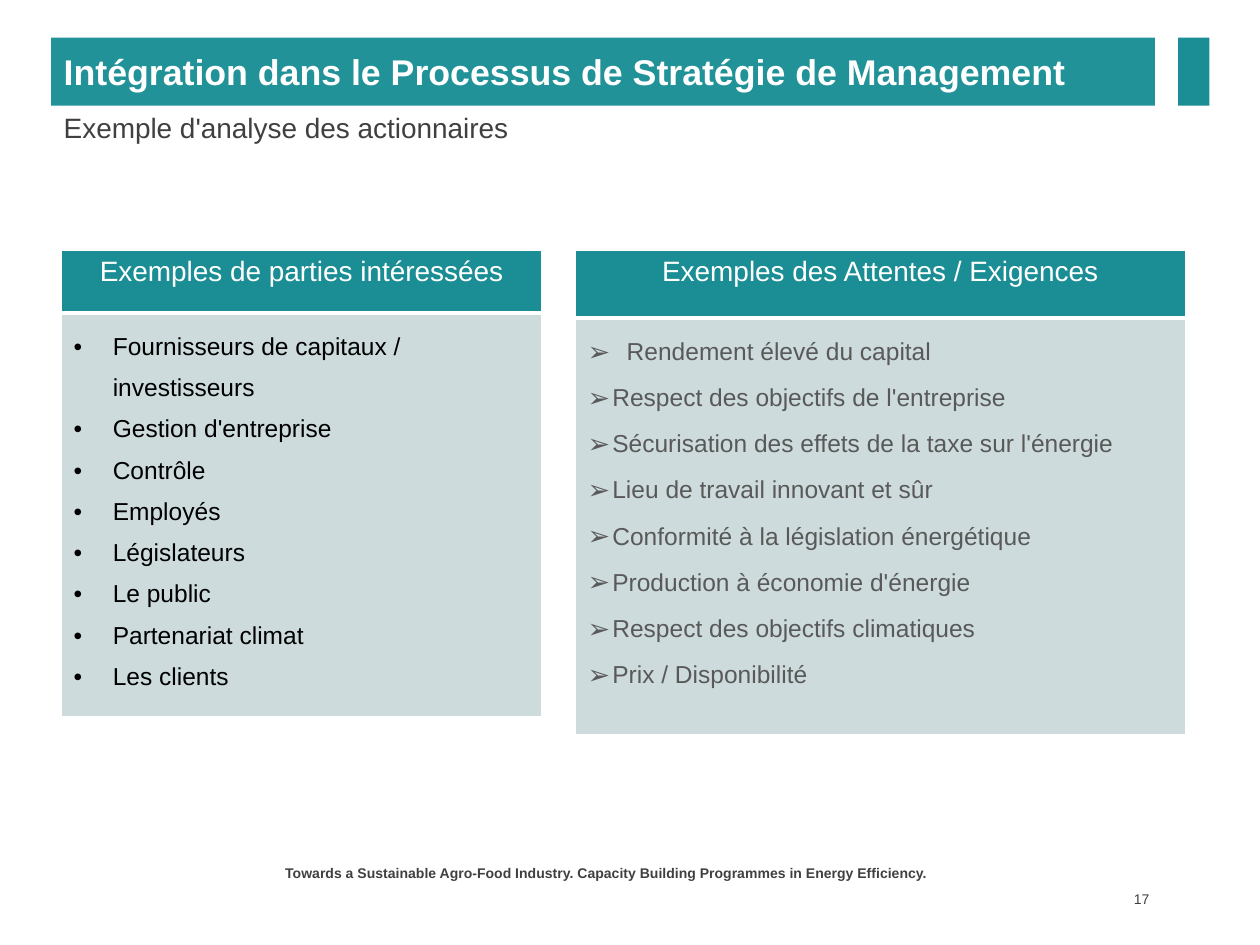
from dataclasses import dataclass

from lxml.etree import SubElement
from pptx import Presentation
from pptx.dml.color import RGBColor as Color
from pptx.enum.shapes import MSO_SHAPE as Shape
from pptx.enum.text import MSO_ANCHOR as Anchor, MSO_AUTO_SIZE as AutoSize, PP_ALIGN as Align
from pptx.oxml.ns import qn
from pptx.util import Cm, Pt


@dataclass(frozen=True)
class Theme:
    font: str = "Arial"
    teal: str = "1B8E95"
    title_teal: str = "209298"
    panel: str = "CDDBDD"
    white: str = "FFFFFF"
    black: str = "000000"
    dark_grey: str = "404040"
    grey: str = "595959"
    title_size: float = 20.4
    heading_size: float = 16
    list_size: float = 14
    footer_size: float = 8


@dataclass(frozen=True)
class ListStyle:
    bullet: str
    color: str
    indents: tuple  # first item, then all following items, in cm
    space_before: float = 0
    bullet_percent: int = 100


class SlideBuilder:
    def __init__(self, slide, theme):
        self.slide = slide
        self.theme = theme

    def place(self, shape, left, top, width, height):
        shape.left, shape.top = Cm(left), Cm(top)
        shape.width, shape.height = Cm(width), Cm(height)

    def paint(self, target, color):
        target.fill.solid()
        target.fill.fore_color.rgb = Color.from_string(color)

    def add_text(self, paragraph, text, size, color, bold=False, align=Align.LEFT):
        paragraph.alignment = align
        run = paragraph.add_run()
        run.text = text
        run.font.name = self.theme.font
        run.font.size = Pt(size)
        run.font.bold = bold
        run.font.color.rgb = Color.from_string(color)

    def placeholder(self, index, text, box, size, color, bold=False, fill=None):
        shape = self.slide.placeholders[index]
        self.place(shape, *box)
        if fill:
            self.paint(shape, fill)
        frame = shape.text_frame
        frame.auto_size = AutoSize.NONE
        frame.vertical_anchor = Anchor.MIDDLE
        paragraph = frame.paragraphs[0]
        paragraph.space_before = Pt(0)
        self.add_text(paragraph, text, size, color, bold)

    def rectangle(self, box, color):
        shape = self.slide.shapes.add_shape(Shape.RECTANGLE, *map(Cm, box))
        shape.shadow.inherit = False
        self.paint(shape, color)
        shape.line.fill.background()

    def text_box(self, text, box, bold=False, align=Align.LEFT, right_margin=0.25):
        frame = self.slide.shapes.add_textbox(*map(Cm, box)).text_frame
        frame.word_wrap = True
        frame.vertical_anchor = Anchor.MIDDLE
        frame.margin_right = Cm(right_margin)
        theme = self.theme
        self.add_text(frame.paragraphs[0], text, theme.footer_size, theme.dark_grey, bold, align)

    def borders(self, cell, top=1, bottom=1):
        properties = cell._tc.get_or_add_tcPr()
        for side, width in (("L", 1), ("R", 1), ("T", top), ("B", bottom)):
            line = SubElement(properties, qn(f"a:ln{side}"), w=str(Pt(width)))
            fill = SubElement(line, qn("a:solidFill"))
            SubElement(fill, qn("a:srgbClr"), val=self.theme.white)

    def bullet(self, paragraph, style, indent):
        properties = paragraph._p.get_or_add_pPr()
        properties.set("marL", str(Cm(indent)))
        properties.set("indent", str(-Cm(indent)))
        SubElement(properties, qn("a:buSzPct"), val=str(style.bullet_percent * 1000))
        SubElement(properties, qn("a:buFont"), typeface=self.theme.font)
        SubElement(properties, qn("a:buChar"), char=style.bullet)

    def list_table(self, heading, items, style, box, heading_height):
        """Draw a two-row table: a heading above a bulleted list."""
        theme = self.theme
        table = self.slide.shapes.add_table(2, 1, *map(Cm, box)).table
        table.first_row = table.horz_banding = False
        table.rows[0].height = Cm(heading_height)
        table.rows[1].height = Cm(box[3] - heading_height)

        heading_cell, list_cell = table.cell(0, 0), table.cell(1, 0)
        self.borders(heading_cell, bottom=3)
        self.borders(list_cell, top=3)
        self.paint(heading_cell, theme.teal)
        self.paint(list_cell, theme.panel)
        self.add_text(heading_cell.text_frame.paragraphs[0], heading,
                      theme.heading_size, theme.white, align=Align.CENTER)

        frame = list_cell.text_frame
        first_indent, next_indent = style.indents
        for number, item in enumerate(items):
            paragraph = frame.add_paragraph() if number else frame.paragraphs[0]
            self.bullet(paragraph, style, next_indent if number else first_indent)
            paragraph.line_spacing = 1.5
            paragraph.space_before = Pt(style.space_before if number else 0)
            self.add_text(paragraph, item, theme.list_size, style.color)


STAKEHOLDERS = [
    "Fournisseurs de capitaux / investisseurs",
    "Gestion d'entreprise",
    "Contrôle",
    "Employés",
    "Législateurs",
    "Le public",
    "Partenariat climat",
    "Les clients",
]
EXPECTATIONS = [
    "Rendement élevé du capital",
    "Respect des objectifs de l'entreprise",
    "Sécurisation des effets de la taxe sur l'énergie",
    "Lieu de travail innovant et sûr",
    "Conformité à la législation énergétique",
    "Production à économie d'énergie",
    "Respect des objectifs climatiques",
    "Prix / Disponibilité",
]


def main():
    theme = Theme()
    presentation = Presentation()
    presentation.slide_width, presentation.slide_height = Cm(25.4), Cm(19.05)
    slide = presentation.slides.add_slide(presentation.slide_layouts[0])
    builder = SlideBuilder(slide, theme)

    builder.placeholder(0, "Intégration dans le Processus de Stratégie de Management",
                        (1.03, 0.76, 22.25, 1.37), theme.title_size, theme.white,
                        bold=True, fill=theme.title_teal)
    builder.placeholder(1, "Exemple d'analyse des actionnaires",
                        (1.03, 2.17, 23.34, 0.79), theme.heading_size, theme.dark_grey)
    builder.rectangle((23.75, 0.76, 0.63, 1.37), theme.teal)

    builder.list_table("Exemples de parties intéressées", STAKEHOLDERS,
                       ListStyle("•", theme.black, (0.79, 0.79)),
                       (1.23, 5.04, 9.7, 9.4), heading_height=1.27)
    builder.list_table("Exemples des Attentes / Exigences", EXPECTATIONS,
                       ListStyle("➢", theme.grey, (0.79, 0.5), 2.8, 110),
                       (11.59, 5.04, 12.31, 9.78), heading_height=1.37)

    builder.text_box("Towards a Sustainable Agro-Food Industry. "
                     "Capacity Building Programmes in Energy Efficiency.",
                     (5.5, 17.33, 13.97, 0.54), bold=True)
    builder.text_box("17", (21.84, 17.87, 1.43, 0.5), align=Align.RIGHT, right_margin=0.1)

    presentation.save("out.pptx")


if __name__ == "__main__":
    main()
